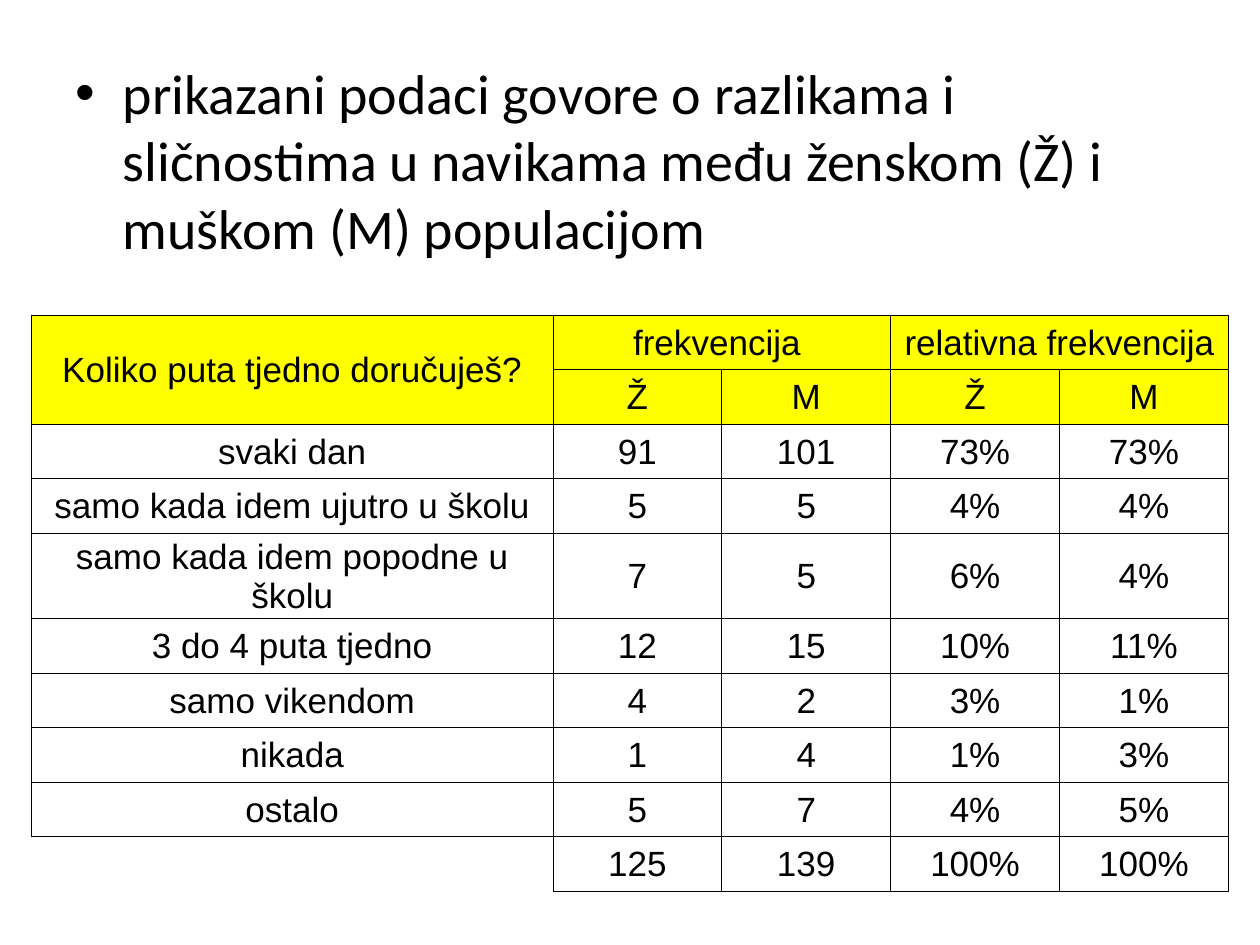
from dataclasses import dataclass

from lxml.etree import SubElement
from pptx import Presentation
from pptx.dml.color import RGBColor
from pptx.enum.text import MSO_ANCHOR as Anchor, PP_ALIGN as Align
from pptx.oxml.ns import qn
from pptx.util import Pt

BLACK, YELLOW = "000000", "FFFF00"
INTRO = ("prikazani podaci govore o razlikama i sličnostima u navikama "
         "među ženskom (Ž) i muškom (M) populacijom")
COLUMN_WIDTHS = (298, 96.5, 96.5, 96.5, 96.5)
ROW_HEIGHT = 31.2
HEADER_ROWS = 2


@dataclass(frozen=True)
class Answer:
    label: str
    girls: str
    boys: str
    girls_share: str
    boys_share: str

    def texts(self) -> tuple[str, ...]:
        return self.label, self.girls, self.boys, self.girls_share, self.boys_share


ROWS = (
    Answer("Koliko puta tjedno doručuješ?", "frekvencija ", "", "relativna frekvencija", ""),
    Answer("", "Ž", "M", "Ž", "M"),
    Answer("svaki dan", "91", "101", "73%", "73%"),
    Answer("samo kada idem ujutro u školu", "5", "5", "4%", "4%"),
    Answer("samo kada idem popodne u školu", "7", "5", "6%", "4%"),
    Answer("3 do 4 puta tjedno", "12", "15", "10%", "11%"),
    Answer("samo vikendom", "4", "2", "3%", "1%"),
    Answer("nikada", "1", "4", "1%", "3%"),
    Answer("ostalo", "5", "7", "4%", "5%"),
    Answer("", "125", "139", "100%", "100%"),
)
MERGES = (((0, 0), (1, 0)), ((0, 1), (0, 2)), ((0, 3), (0, 4)))


def color(value: str) -> RGBColor:
    return RGBColor.from_string(value)


def style_font(font, name: str, size: float) -> None:
    font.name, font.size, font.bold = name, Pt(size), False
    font.color.rgb = color(BLACK)


def draw_borders(cell, visible: str) -> None:
    properties = cell._tc.get_or_add_tcPr()
    for side in "LRTB":
        line = SubElement(properties, qn(f"a:ln{side}"), w=str(Pt(0.5)))
        if side in visible:
            fill = SubElement(line, qn("a:solidFill"))
            SubElement(fill, qn("a:srgbClr"), val=BLACK)
        else:
            SubElement(line, qn("a:noFill"))


def draw_cell(cell, text: str, fill: str | None, borders: str) -> None:
    draw_borders(cell, borders)
    if fill:
        cell.fill.solid()
        cell.fill.fore_color.rgb = color(fill)
    else:
        cell.fill.background()
    cell.margin_left = cell.margin_right = cell.margin_top = Pt(0.7)
    cell.margin_bottom = Pt(0)
    cell.vertical_anchor = Anchor.MIDDLE
    cell.text_frame.text = text
    para = cell.text_frame.paragraphs[0]
    para.alignment = Align.CENTER
    style_font(para.font, "Arial", 20)
    for span in para.runs:
        style_font(span.font, "Arial", 20)


def draw_intro(page) -> None:
    box = page.shapes.add_textbox(Pt(36), Pt(30), Pt(648), Pt(356))
    box.text_frame.word_wrap = True
    box.text_frame.text = INTRO
    para = box.text_frame.paragraphs[0]
    para.space_before = Pt(6.4)
    style_font(para.runs[0].font, "Calibri", 32)
    properties = para._p.get_or_add_pPr()
    properties.set("marL", str(Pt(27)))
    properties.set("indent", str(Pt(-27)))
    SubElement(properties, qn("a:buFont"), typeface="Arial")
    SubElement(properties, qn("a:buChar"), char="•")


def draw_table(page) -> None:
    table = page.shapes.add_table(
        len(ROWS), len(COLUMN_WIDTHS), Pt(18), Pt(180),
        Pt(sum(COLUMN_WIDTHS)), Pt(ROW_HEIGHT * len(ROWS))).table
    table.first_row = table.horz_banding = False
    for column, width in zip(table.columns, COLUMN_WIDTHS):
        column.width = Pt(width)
    for row_index, answer in enumerate(ROWS):
        table.rows[row_index].height = Pt(ROW_HEIGHT)
        fill = YELLOW if row_index < HEADER_ROWS else None
        for column_index, text in enumerate(answer.texts()):
            corner = row_index == len(ROWS) - 1 and column_index == 0
            draw_cell(table.cell(row_index, column_index), text, fill,
                      "RT" if corner else "LRTB")
    for first, last in MERGES:
        table.cell(*first).merge(table.cell(*last))


def main() -> None:
    """Build the slide comparing breakfast habits of girls and boys."""
    deck = Presentation()
    deck.slide_width, deck.slide_height = Pt(720), Pt(540)
    page = deck.slides.add_slide(deck.slide_layouts[6])
    draw_intro(page)
    draw_table(page)
    deck.save("out.pptx")


if __name__ == "__main__":
    main()
